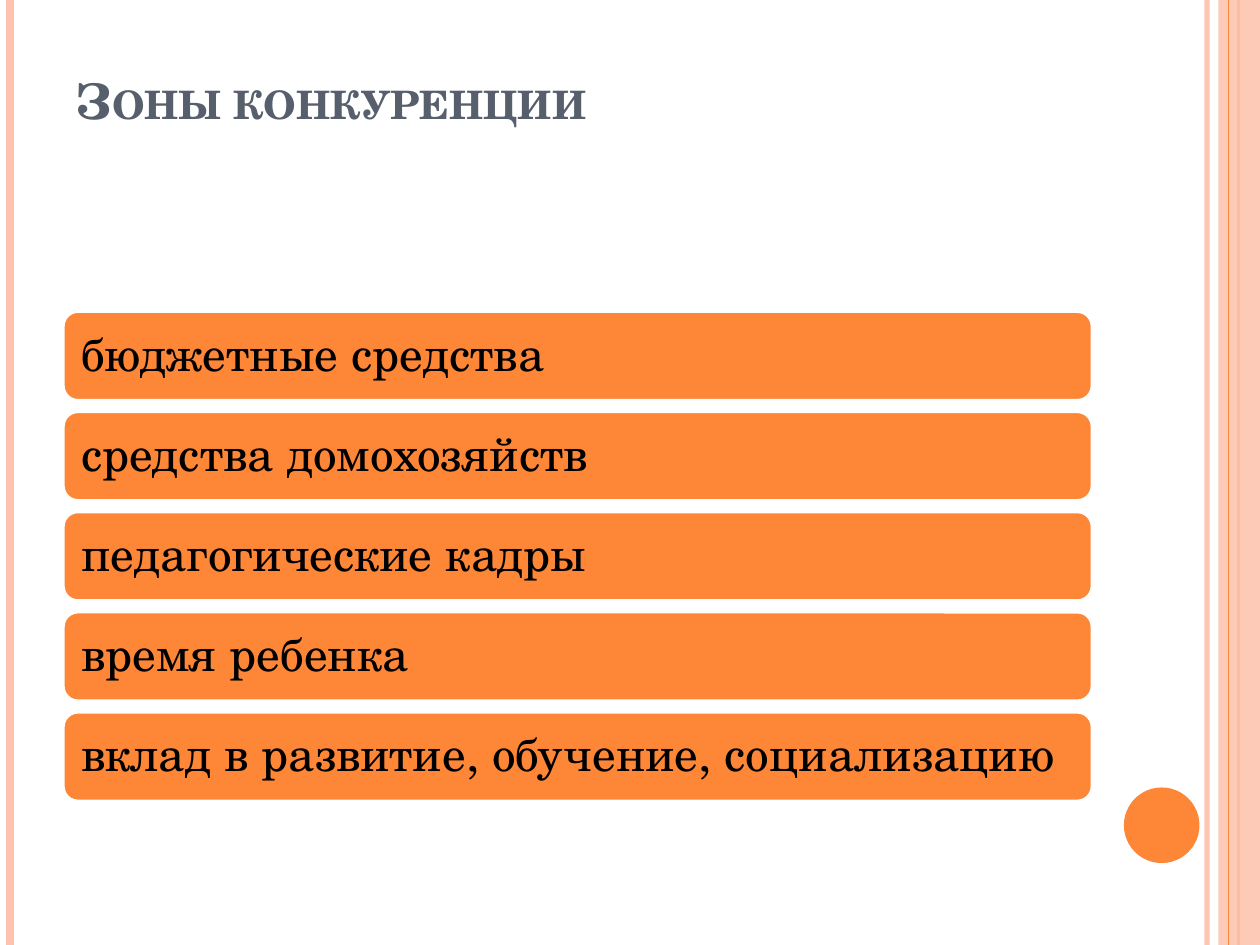
from lxml import etree
from pptx import Presentation
from pptx.dml.color import RGBColor
from pptx.enum import shapes, text
from pptx.oxml.ns import qn
from pptx.util import Inches, Pt

TITLE = "Зоны конкуренции"
ZONES = [
    "бюджетные средства",
    "средства домохозяйств",
    "педагогические кадры",
    "время ребенка",
    "вклад в развитие, обучение, социализацию",
]
FONT = "TeX Gyre Schola"
ORANGE, PEACH, SLATE, BLACK, WHITE = "FE8637", "FEC3AE", "575F6D", "000000", "FFFFFF"
# x, colour, width in points, opacity in percent
STRIPES_BEHIND = [(9.58, PEACH, 3, 93), (0.08, PEACH, 4.5, 100), (9.83, ORANGE, 1.5, 100)]
STRIPE_IN_FRONT = (9.75, ORANGE, 0.75, 100)
SLIDE_WIDTH, SLIDE_HEIGHT = 10, 7.5
LEFT, WIDTH = 0.5, 8.17
BAR_TOP, BAR_HEIGHT, BAR_STEP = 2.47, 0.71, 0.795


def paint(color_format, color, opacity=100):
    color_format.rgb = RGBColor.from_string(color)
    if opacity < 100:
        for element in color_format._xFill.iter(qn("a:srgbClr")):
            etree.SubElement(element, qn("a:alpha"), val=str(opacity * 1000))


def add_stripe(slide, x, color, width, opacity):
    stripe = slide.shapes.add_connector(
        shapes.MSO_CONNECTOR.STRAIGHT, Inches(x), 0, Inches(x), Inches(SLIDE_HEIGHT))
    stripe.line.width = Pt(width)
    stripe.line.fill.solid()
    paint(stripe.line.fill.fore_color, color, opacity)
    etree.SubElement(stripe._element.spPr, qn("a:effectLst"))


def add_shape(slide, kind, box, color, opacity=100):
    shape = slide.shapes.add_shape(kind, *map(Inches, box))
    shape.shadow.inherit = False
    shape.fill.solid()
    paint(shape.fill.fore_color, color, opacity)
    shape.line.fill.background()
    return shape


def write(shape, words, size, color, anchor, insets):
    frame = shape.text_frame
    frame.word_wrap = True
    frame.vertical_anchor = anchor
    (frame.margin_left, frame.margin_top,
     frame.margin_right, frame.margin_bottom) = map(Inches, insets)
    paragraph = frame.paragraphs[0]
    paragraph.text = words
    paragraph.alignment = text.PP_ALIGN.LEFT
    paragraph.font.name = FONT
    paragraph.font.size = Pt(size)
    paragraph.font.color.rgb = RGBColor.from_string(color)
    return paragraph


def add_title(slide):
    box = slide.shapes.add_textbox(*map(Inches, (LEFT, 0.3, WIDTH, 1.25)))
    paragraph = write(box, TITLE, 28, SLATE, text.MSO_ANCHOR.BOTTOM, (0.1, 0.05, 0.1, 0.52))
    paragraph.font.bold = True
    paragraph.runs[0].font._element.set("cap", "small")


def add_zone(slide, index, words):
    box = (LEFT, BAR_TOP + index * BAR_STEP, WIDTH, BAR_HEIGHT)
    bar = add_shape(slide, shapes.MSO_SHAPE.ROUNDED_RECTANGLE, box, ORANGE)
    bar.line.width = Pt(2)
    bar.line.color.rgb = RGBColor.from_string(WHITE)
    paragraph = write(bar, words, 27, BLACK, text.MSO_ANCHOR.MIDDLE, [0.11] * 4)
    paragraph.line_spacing = 0.9


def main():
    presentation = Presentation()
    presentation.slide_width = Inches(SLIDE_WIDTH)
    presentation.slide_height = Inches(SLIDE_HEIGHT)
    slide = presentation.slides.add_slide(presentation.slide_layouts[6])

    for stripe in STRIPES_BEHIND:
        add_stripe(slide, *stripe)
    add_shape(slide, shapes.MSO_SHAPE.RECTANGLE, (9.67, 0, 0.33, SLIDE_HEIGHT), PEACH, 87)
    add_stripe(slide, *STRIPE_IN_FRONT)
    add_shape(slide, shapes.MSO_SHAPE.OVAL, (8.92, 6.25, 0.6, 0.6), ORANGE)

    add_title(slide)
    for index, words in enumerate(ZONES):
        add_zone(slide, index, words)
    presentation.save("out.pptx")


if __name__ == "__main__":
    main()
